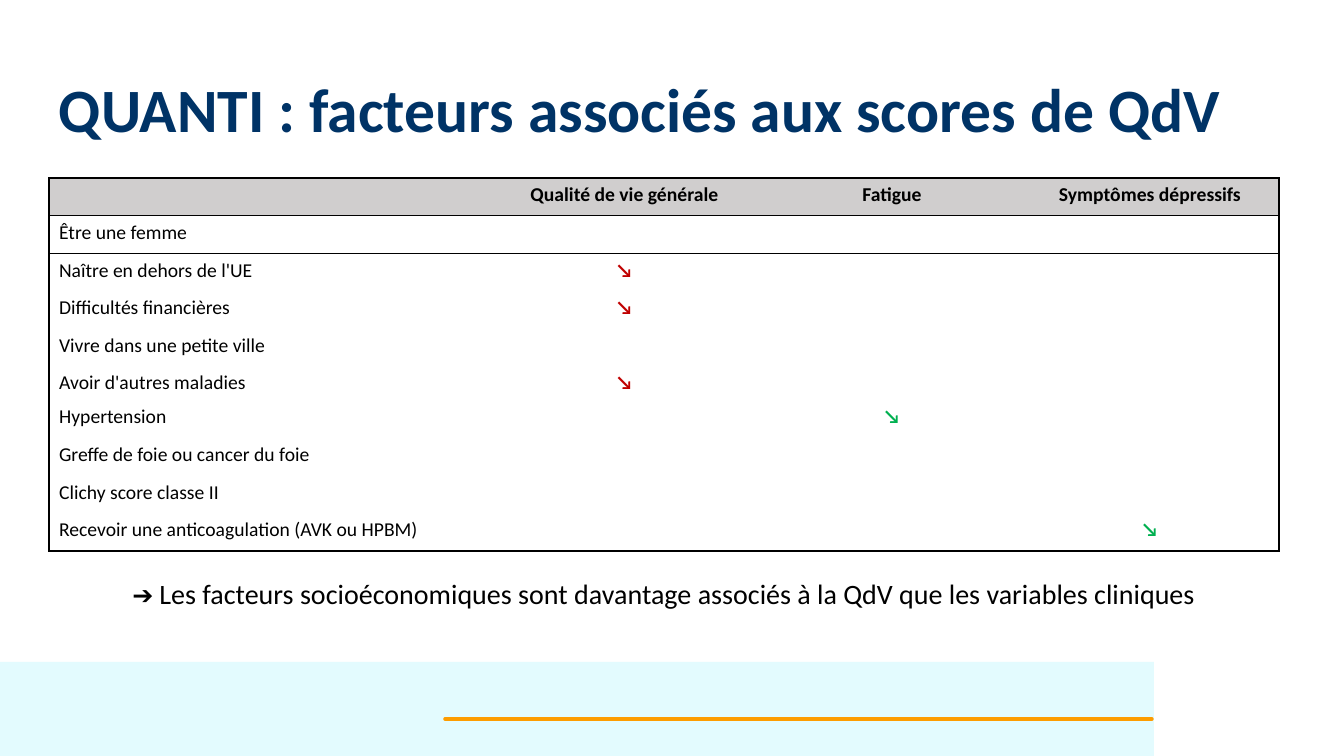
import pptx
import pptx.util
import pptx.dml.color
import pptx.enum.text
import pptx.enum.shapes
import pptx.oxml.ns
from lxml import etree

RGB = pptx.dml.color.RGBColor
NAVY = RGB(0x00, 0x33, 0x66)
BLACK = RGB(0x00, 0x00, 0x00)
GREY = RGB(0xD0, 0xCE, 0xCE)
RED = RGB(0xC0, 0x00, 0x00)
GREEN = RGB(0x00, 0xB0, 0x50)
PALE = RGB(0xE3, 0xFB, 0xFE)
GOLD = RGB(0xFD, 0x9C, 0x00)
LEFT = pptx.enum.text.PP_ALIGN.LEFT
MID = pptx.enum.text.PP_ALIGN.CENTER

TITLE = "QUANTI : facteurs associés aux scores de QdV"
NOTE = [("➔ ", 18), ("Les facteurs socioéconomiques sont davantage associés à la QdV que les variables cliniques", 20)]
HEADS = ["", "Qualité de vie générale", "Fatigue", "Symptômes dépressifs"]
FACTORS = [
    "Être une femme",
    "Naître en dehors de l'UE",
    "Difficultés financières",
    "Vivre dans une petite ville",
    "Avoir d'autres maladies",
    "Hypertension",
    "Greffe de foie ou cancer du foie",
    "Clichy score classe II",
    "Recevoir une anticoagulation (AVK ou HPBM)",
]
DROPS = {(2, 1): RED, (3, 1): RED, (5, 1): RED, (6, 2): GREEN, (9, 3): GREEN}
WIDTHS = [437, 277, 258, 258]
HIGH, SHORT, SHORT_ROW = 373, 34, 5
RULED = (0, 1)


def px(n):
    return round(n * 914400 / 100.8)


def write(frame, text, size=14, color=BLACK, bold=False, align=LEFT):
    par = frame.paragraphs[0]
    par.alignment = align
    if not text:
        end = etree.SubElement(par._p, pptx.oxml.ns.qn("a:endParaRPr"))
        end.set("sz", str(size * 100))
        return par
    run = par.add_run()
    run.text = text
    run.font.name = "Calibri"
    run.font.size = pptx.util.Pt(size)
    run.font.bold = bold
    run.font.color.rgb = color
    return par


def add_box(slide, x, y, w, h):
    frame = slide.shapes.add_textbox(px(x), px(y), px(w), px(h)).text_frame
    frame.word_wrap = True
    return frame


def edge(cell, sides):
    props = cell._tc.get_or_add_tcPr()
    for at, side in enumerate("LRTB"):
        line = etree.Element(pptx.oxml.ns.qn("a:ln" + side), w="12700")
        if side in sides:
            fill = etree.SubElement(line, pptx.oxml.ns.qn("a:solidFill"))
            etree.SubElement(fill, pptx.oxml.ns.qn("a:srgbClr"), val=str(BLACK))
        else:
            etree.SubElement(line, pptx.oxml.ns.qn("a:noFill"))
        props.insert(at, line)


def add_grid(slide):
    rows = [HEADS] + [[name, "", "", ""] for name in FACTORS]
    last, end = len(rows) - 1, len(WIDTHS) - 1
    table = slide.shapes.add_table(len(rows), len(WIDTHS), px(49), px(178), px(sum(WIDTHS)), px(HIGH)).table
    for col, wide in zip(table.columns, WIDTHS):
        col.width = px(wide)
    for r, row in enumerate(rows):
        table.rows[r].height = px(SHORT if r == SHORT_ROW else (HIGH - SHORT) / last)
        for c, text in enumerate(row):
            cell = table.cell(r, c)
            drop = DROPS.get((r, c))
            write(cell.text_frame, "↘" if drop else text, color=drop or BLACK,
                  bold=r == 0 or bool(drop), align=MID if r == 0 or c else LEFT)
            if r == 0:
                cell.fill.solid()
                cell.fill.fore_color.rgb = GREY
            else:
                cell.fill.background()
            sides = "L" * (c == 0) + "R" * (c == end)
            sides += "T" * (r == 0 or r - 1 in RULED) + "B" * (r == last or r in RULED)
            edge(cell, sides)


def main():
    deck = pptx.Presentation()
    deck.slide_width, deck.slide_height = px(1344), px(756)
    slide = deck.slides.add_slide(deck.slide_layouts[6])

    band = slide.shapes.add_shape(pptx.enum.shapes.MSO_SHAPE.RECTANGLE, 0, px(662), px(1154), px(94))
    band.shadow.inherit = False
    band.fill.solid()
    band.fill.fore_color.rgb = PALE
    band.line.fill.background()

    rule = slide.shapes.add_connector(pptx.enum.shapes.MSO_CONNECTOR.STRAIGHT, px(445), px(719), px(1152), px(719))
    rule.line.color.rgb = GOLD
    rule.line.width = pptx.util.Pt(2.5)
    props = rule._element.spPr
    etree.SubElement(props, pptx.oxml.ns.qn("a:effectLst"))
    etree.SubElement(props.find(pptx.oxml.ns.qn("a:ln")), pptx.oxml.ns.qn("a:round"))
    props.find(pptx.oxml.ns.qn("a:ln")).set("cap", "rnd")

    head = add_box(slide, 49, 40, 1266, 146)
    head.vertical_anchor = pptx.enum.text.MSO_ANCHOR.MIDDLE
    write(head, TITLE, size=44, color=NAVY, bold=True).line_spacing = 0.9

    add_grid(slide)

    note = add_box(slide, 49, 572, 1230, 75)
    for text, size in NOTE:
        write(note, text, size=size, align=MID)

    deck.save("out.pptx")


if __name__ == "__main__":
    main()
